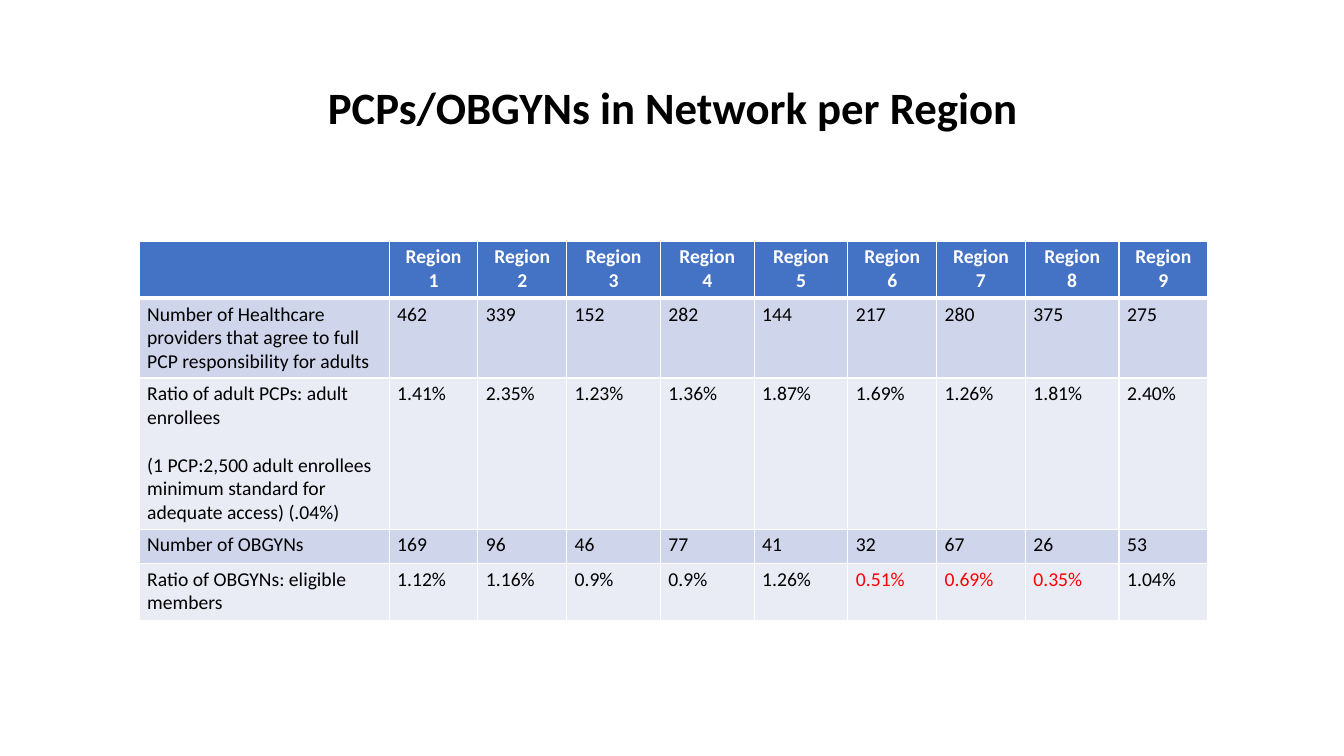
import lxml.etree
import pptx
import pptx.dml.color
import pptx.enum.text
import pptx.oxml.ns
import pptx.util

ALIGN = pptx.enum.text.PP_ALIGN
UNITS_PER_INCH = 12
BLACK, WHITE, RED = "000000", "FFFFFF", "FF0000"
HEADER_BLUE = "4472C4"
BANDS = ["CFD5EA", "E9EBF5"]

REGIONS = range(1, 10)
MEASURES = [
    (["Number of Healthcare providers that agree to full PCP responsibility for adults"],
     ["462", "339", "152", "282", "144", "217", "280", "375", "275"]),
    (["Ratio of adult PCPs: adult enrollees",
      "(1 PCP:2,500 adult enrollees minimum standard for adequate access) (.04%)"],
     ["1.41%", "2.35%", "1.23%", "1.36%", "1.87%", "1.69%", "1.26%", "1.81%", "2.40%"]),
    (["Number of OBGYNs"],
     ["169", "96", "46", "77", "41", "32", "67", "26", "53"]),
    (["Ratio of OBGYNs: eligible members"],
     ["1.12%", "1.16%", "0.9%", "0.9%", "1.26%", "0.51%", "0.69%", "0.35%", "1.04%"]),
]
LOW_RATIOS = {"0.51%", "0.69%", "0.35%"}
LABEL_WIDTH, NARROW, WIDE = 29.76, 10.56, 11.16
WIDE_REGIONS = {3, 4, 5, 8}
ROW_HEIGHTS = [6.84, 9.48, 18, 4.08, 6.84]


def color(value):
    return pptx.dml.color.RGBColor.from_string(value)


def grid(units):
    return pptx.util.Inches(units / UNITS_PER_INCH)


class SlideBuilder:
    font = "Calibri"

    def __init__(self, slide):
        self.slide = slide

    def add_lines(self, frame, lines, size, ink=BLACK, bold=False, align=ALIGN.LEFT,
                  gap=0, spacing=1.0):
        for index, line in enumerate(lines):
            paragraph = frame.add_paragraph() if index else frame.paragraphs[0]
            paragraph.alignment = align
            paragraph.line_spacing = spacing
            paragraph.space_before = pptx.util.Pt(gap if index else 0)
            run = paragraph.add_run()
            run.text = line
            run.font.name = self.font
            run.font.size = pptx.util.Pt(size)
            run.font.bold = bold
            run.font.color.rgb = color(ink)

    def title(self, text, left, top, width, height):
        heading = self.slide.shapes.add_textbox(*map(grid, (left, top, width, height)))
        heading.text_frame.word_wrap = True
        heading.text_frame.vertical_anchor = pptx.enum.text.MSO_ANCHOR.TOP
        self.add_lines(heading.text_frame, [text], 32, bold=True, align=ALIGN.CENTER,
                       spacing=0.9)

    def table(self, left, top, widths, heights):
        frame = self.slide.shapes.add_table(
            len(heights), len(widths), grid(left), grid(top),
            grid(sum(widths)), grid(sum(heights)))
        for column, width in zip(frame.table.columns, widths):
            column.width = grid(width)
        for row, height in zip(frame.table.rows, heights):
            row.height = grid(height)
        frame.table.horz_banding = False
        return frame.table

    def cell(self, cell, lines, fill, top_line=1, bottom_line=1, **style):
        cell.margin_left = cell.margin_right = pptx.util.Inches(0.08)
        cell.margin_top = cell.margin_bottom = pptx.util.Inches(0.04)
        properties = cell._tc.get_or_add_tcPr()
        for side, points in (("L", 1), ("R", 1), ("T", top_line), ("B", bottom_line)):
            border = lxml.etree.SubElement(
                properties, pptx.oxml.ns.qn(f"a:ln{side}"), w=str(pptx.util.Pt(points)))
            solid = lxml.etree.SubElement(border, pptx.oxml.ns.qn("a:solidFill"))
            lxml.etree.SubElement(solid, pptx.oxml.ns.qn("a:srgbClr"), val=WHITE)
        cell.fill.solid()
        cell.fill.fore_color.rgb = color(fill)
        self.add_lines(cell.text_frame, lines, 14, **style)


def main():
    deck = pptx.Presentation()
    deck.slide_width = pptx.util.Inches(13.33)
    deck.slide_height = pptx.util.Inches(7.5)
    builder = SlideBuilder(deck.slides.add_slide(deck.slide_layouts[6]))

    builder.title("PCPs/OBGYNs in Network per Region", 18.12, 9.6, 123.96, 12.48)

    widths = [LABEL_WIDTH] + [WIDE if region in WIDE_REGIONS else NARROW for region in REGIONS]
    providers = builder.table(16.56, 28.68, widths, ROW_HEIGHTS)

    headings = [[]] + [["Region", str(region)] for region in REGIONS]
    for column, heading in enumerate(headings):
        builder.cell(providers.cell(0, column), heading, HEADER_BLUE, bottom_line=3,
                     ink=WHITE, bold=True, align=ALIGN.CENTER)

    for row, (label, values) in enumerate(MEASURES, start=1):
        band = BANDS[(row - 1) % 2]
        top_line = 3 if row == 1 else 1
        for column, lines in enumerate([label] + [[value] for value in values]):
            ink = RED if lines[0] in LOW_RATIOS else BLACK
            builder.cell(providers.cell(row, column), lines, band, top_line, ink=ink, gap=17)

    deck.save("out.pptx")


if __name__ == "__main__":
    main()
